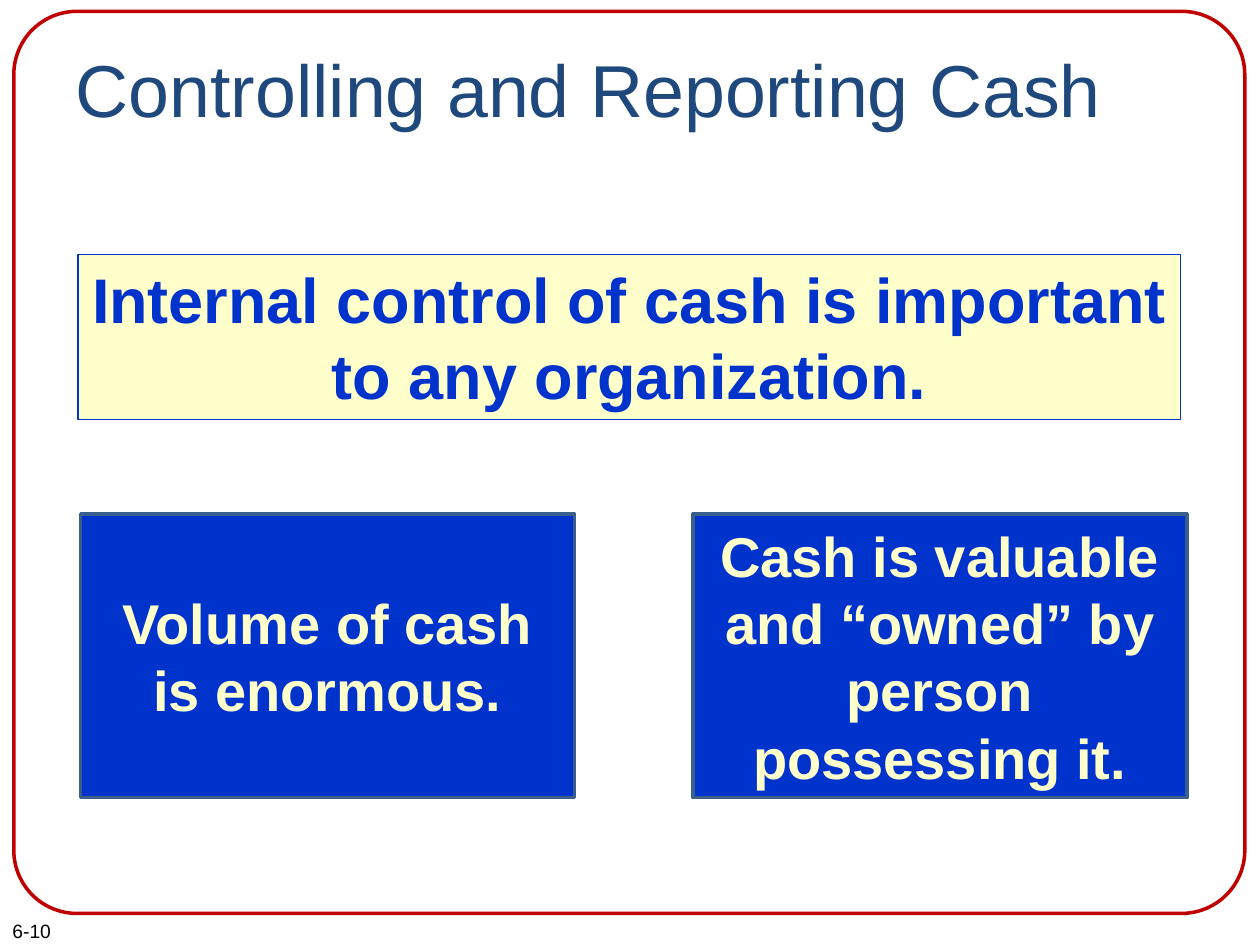
from pptx import Presentation
from pptx.dml.color import RGBColor
from pptx.enum.shapes import MSO_SHAPE as SHAPE
from pptx.enum.text import MSO_ANCHOR as ANCHOR, PP_ALIGN as ALIGN
from pptx.util import Inches, Pt

BLACK = RGBColor(0x00, 0x00, 0x00)
RED = RGBColor(0xC0, 0x00, 0x00)
NAVY = RGBColor(0x1F, 0x49, 0x7D)
BLUE = RGBColor(0x00, 0x33, 0xCC)
STEEL = RGBColor(0x3A, 0x5F, 0x8C)
CREAM = RGBColor(0xFF, 0xFF, 0xCC)


class SlideBuilder:
    font = "Arial"

    def __init__(self, prs):
        self.s = prs.slides.add_slide(prs.slide_layouts[5])  # Title Only

    def add_text(self, sp, text, size, color, bold=False, align=ALIGN.LEFT, anchor=ANCHOR.TOP):
        tf = sp.text_frame
        tf.word_wrap = True
        tf.vertical_anchor = anchor
        p = tf.paragraphs[0]
        p.alignment = align
        r = p.add_run()
        r.text = text
        r.font.name = self.font
        r.font.size = Pt(size)
        r.font.bold = bold
        r.font.color.rgb = color

    def title(self, text, left, top, width, height):
        sp = self.s.shapes.title
        sp.left, sp.top = Inches(left), Inches(top)
        sp.width, sp.height = Inches(width), Inches(height)
        self.add_text(sp, text, 42, NAVY)

    def label(self, text, left, top, width, height):
        sp = self.s.shapes.add_textbox(Inches(left), Inches(top), Inches(width), Inches(height))
        self.add_text(sp, text, 11, BLACK)

    def outline(self, kind, left, top, width, height, line, weight):
        sp = self.s.shapes.add_shape(kind, Inches(left), Inches(top), Inches(width), Inches(height))
        sp.shadow.inherit = False
        sp.fill.background()
        sp.line.color.rgb = line
        sp.line.width = Pt(weight)
        return sp

    def frame(self, left, top, width, height):
        sp = self.outline(SHAPE.ROUNDED_RECTANGLE, left, top, width, height, RED, 2)
        sp.adjustments[0] = 0.07

    def box(self, text, left, top, width, height, size, fill, color, line, weight, anchor):
        sp = self.outline(SHAPE.RECTANGLE, left, top, width, height, line, weight)
        sp.fill.solid()
        sp.fill.fore_color.rgb = fill
        self.add_text(sp, text, size, color, True, ALIGN.CENTER, anchor)


def main():
    prs = Presentation()
    prs.slide_width, prs.slide_height = Inches(10), Inches(7.5)
    slide = SlideBuilder(prs)

    # Page number, border and title
    slide.label("6-10", 0, 7.25, 1.42, 0.29)
    slide.frame(0.11, 0.09, 9.77, 7.16)
    slide.title("Controlling and Reporting Cash", 0.5, 0.3, 9, 1.25)

    # Main statement
    slide.box("Internal control of cash is important to any organization.",
              0.62, 2.02, 8.75, 1.31, 36, CREAM, BLUE, BLUE, 0.75, ANCHOR.TOP)

    # Two reasons, side by side
    reasons = ["Volume of cash is enormous.",
               "Cash is valuable and “owned” by person possessing it."]
    for i, reason in enumerate(reasons):
        slide.box(reason, 0.64 + i * 4.86, 4.08, 3.92, 2.25,
                  32, BLUE, CREAM, STEEL, 2, ANCHOR.MIDDLE)

    prs.save("out.pptx")


if __name__ == "__main__":
    main()
